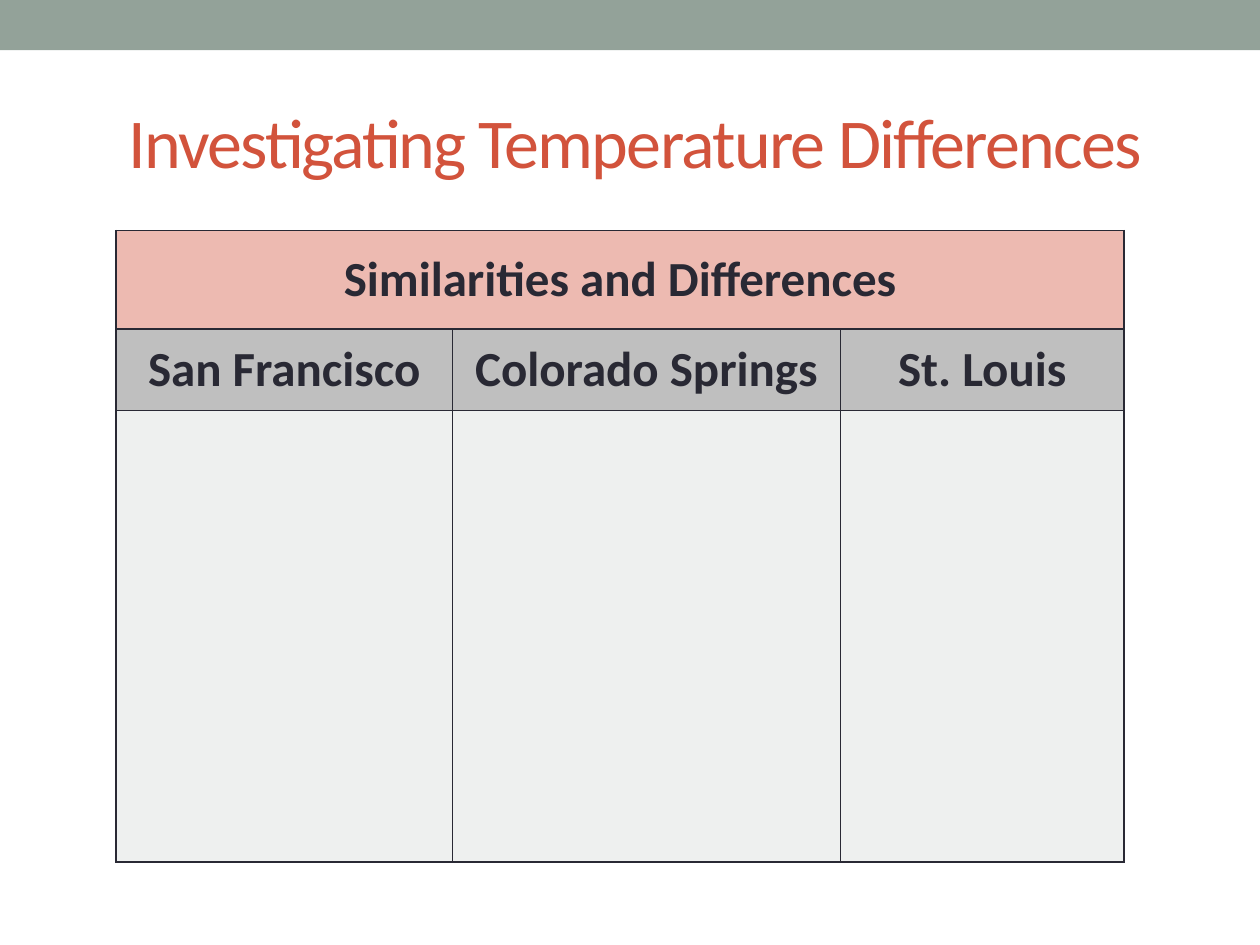
import pptx
import pptx.dml.color
import pptx.enum.shapes
import pptx.enum.text
import pptx.oxml
import pptx.oxml.ns
import pptx.util
from pptx.dml.color import RGBColor
from pptx.util import Cm

SAGE = RGBColor(0x93, 0xA2, 0x99)
BRICK = RGBColor(0xD2, 0x53, 0x3C)
INK = RGBColor(0x29, 0x29, 0x34)
PINK = RGBColor(0xED, 0xBA, 0xB1)
GRAY = RGBColor(0xBF, 0xBF, 0xBF)
PALE = RGBColor(0xEE, 0xF0, 0xEF)
FONT = "Calibri"


def add_span(para, text, size, color, bold=False):
    span = para.add_run()
    span.text = text
    span.font.name = FONT
    span.font.size = pptx.util.Pt(size)
    span.font.bold = bold
    span.font.color.rgb = color
    return span


def style_cell(cell, color):
    """Draw the four borders, then the fill."""
    properties = cell._tc.get_or_add_tcPr()
    for side in ("lnL", "lnR", "lnT", "lnB"):
        properties.append(pptx.oxml.parse_xml(
            f'<a:{side} {pptx.oxml.ns.nsdecls("a")} w="12700"><a:solidFill>'
            f'<a:srgbClr val="{INK}"/></a:solidFill></a:{side}>'))
    cell.fill.solid()
    cell.fill.fore_color.rgb = color
    cell.vertical_anchor = pptx.enum.text.MSO_ANCHOR.MIDDLE


deck = pptx.Presentation()
deck.slide_width, deck.slide_height = Cm(25.4), Cm(19.05)
page = deck.slides.add_slide(deck.slide_layouts[5])

# Top band
band = page.shapes.add_shape(
    pptx.enum.shapes.MSO_SHAPE.RECTANGLE, 0, 0, deck.slide_width, Cm(1.01))
band.shadow.inherit = False
band.fill.solid()
band.fill.fore_color.rgb = SAGE
band.line.fill.background()

# Title
title = page.shapes.title
title.left, title.top, title.width, title.height = Cm(2.34), Cm(1.47), Cm(21.79), Cm(2.74)
title.text_frame.vertical_anchor = pptx.enum.text.MSO_ANCHOR.MIDDLE
para = title.text_frame.paragraphs[0]
para.alignment = pptx.enum.text.PP_ALIGN.LEFT
span = add_span(para, "Investigating Temperature Differences", 40, BRICK)
span.font._element.set("spc", "-100")

# Comparison table
column_widths = (6.78, 7.82, 5.72)
row_heights = (1.98, 1.65, 9.1)
row_colors = (PINK, GRAY, PALE)
row_texts = (("Similarities and Differences",),
             ("San Francisco", "Colorado Springs", "St. Louis"), ())
table = page.shapes.add_table(
    3, 3, Cm(2.34), Cm(4.65), Cm(sum(column_widths)), Cm(sum(row_heights))).table
for column, width in zip(table.columns, column_widths):
    column.width = Cm(width)
for row, height, color, texts in zip(table.rows, row_heights, row_colors, row_texts):
    row.height = Cm(height)
    for cell in row.cells:
        style_cell(cell, color)
    for cell, text in zip(row.cells, texts):
        para = cell.text_frame.paragraphs[0]
        para.alignment = pptx.enum.text.PP_ALIGN.CENTER
        add_span(para, text, 28, INK, bold=True)
table.cell(0, 0).merge(table.cell(0, 2))

deck.save("out.pptx")
